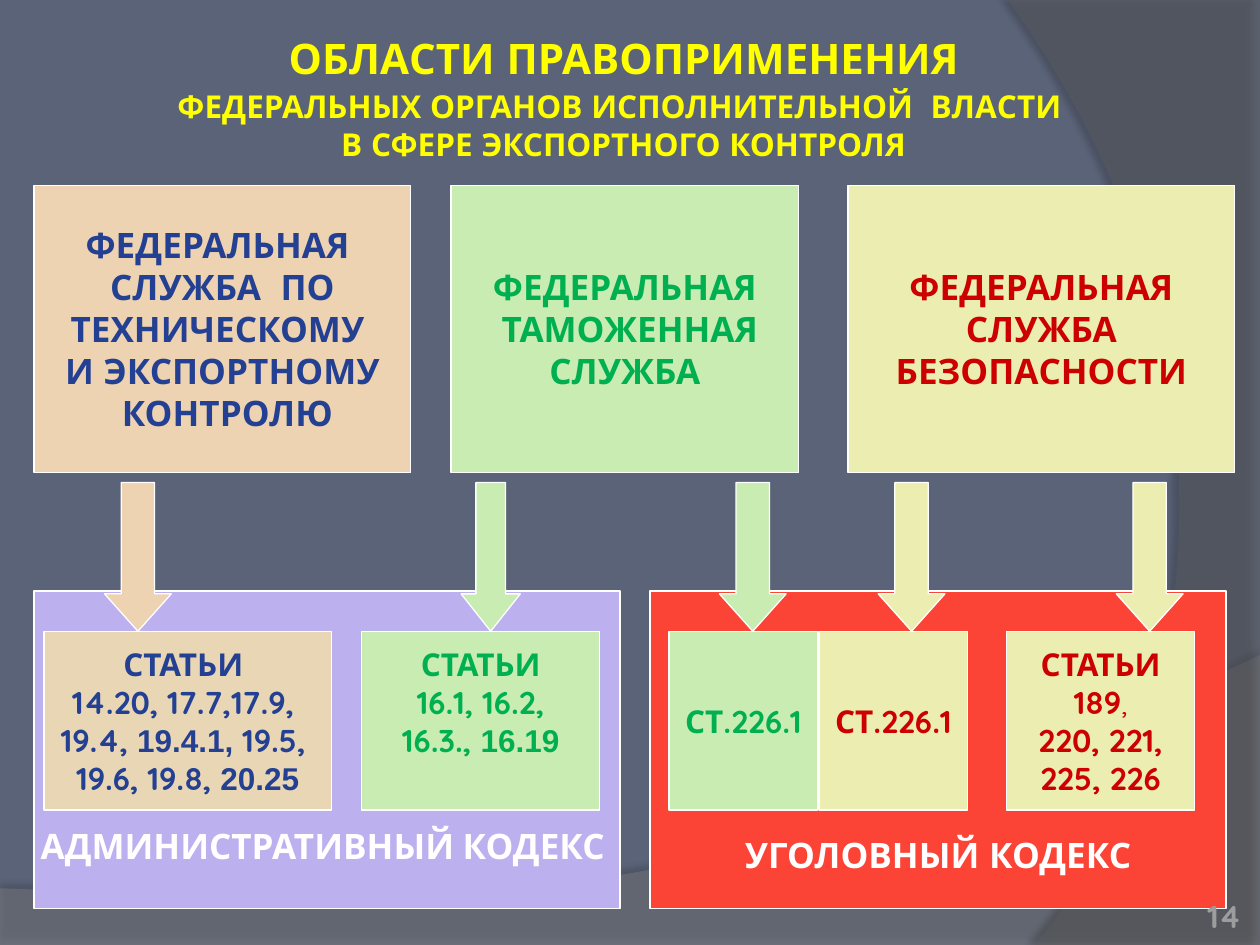
from lxml.etree import SubElement
from pptx import Presentation
from pptx.dml.color import RGBColor
from pptx.enum.shapes import MSO_SHAPE
from pptx.enum.text import MSO_ANCHOR, MSO_AUTO_SIZE, PP_ALIGN
from pptx.oxml.ns import qn
from pptx.util import Inches, Pt

THEME = {
    "back": "5A6378", "wave": "7F7F7F", "arc": "5E5E5E", "line": "FFFFFF",
    "title": "FFFF00", "number": "9D9D9E", "label": "FFFFFF",
    "sand": "EDD3B1", "tan": "E9D6B5", "green": "C9ECB2", "lemon": "ECEDB1",
    "violet": "BDB0EE", "red": "FC4436",
    "navy": "244092", "leaf": "00B050", "wine": "CC0000",
    "font": "Quicksand", "alt": "Arial",
    "head": 24, "big": 20, "mid": 18,
}
ALT = {"font": THEME["alt"]}

# A line is a string or a list of (text, format) runs.
TITLE = [
    [("ОБЛАСТИ ПРАВОПРИМЕНЕНИЯ", {"size": THEME["head"]})],
    [(" ", {"size": THEME["big"]}),
     ("ФЕДЕРАЛЬНЫХ ОРГАНОВ ИСПОЛНИТЕЛЬНОЙ  ВЛАСТИ  ", {})],
    "В СФЕРЕ ЭКСПОРТНОГО КОНТРОЛЯ",
]
# left, width, fill, ink, lines
AGENCIES = [
    (0.27, 2.99, "sand", "navy",
     ["ФЕДЕРАЛЬНАЯ ", "СЛУЖБА  ПО", "ТЕХНИЧЕСКОМУ ", "И ЭКСПОРТНОМУ", " КОНТРОЛЮ"]),
    (3.58, 2.76, "green", "leaf", ["ФЕДЕРАЛЬНАЯ", " ТАМОЖЕННАЯ", "СЛУЖБА"]),
    (6.73, 3.07, "lemon", "wine", ["ФЕДЕРАЛЬНАЯ", " СЛУЖБА ", "БЕЗОПАСНОСТИ"]),
]
# left, width, fill, space under the label, label
CODES = [
    (0.27, 4.65, "violet", 0.33,
     [[("АДМИНИСТРАТИВНЫЙ", {}), (" ", {"size": THEME["mid"]}), ("КОДЕКС", {}),
       (" ", {"size": THEME["mid"], "bold": False})]]),
    (5.16, 4.57, "red", 0.26, ["УГОЛОВНЫЙ КОДЕКС"]),
]
# left, width, fill, ink, bottom inset, lines
ARTICLES = [
    (0.35, 2.28, "tan", "navy", 0.05,
     ["СТАТЬИ ", "14.20, 17.7,17.9, ",
      [("19.4, ", {}), ("19.4.1,", ALT), (" 19.5, ", {})],
      [("19.6, 19.8, ", {}), ("20.25", ALT)]]),
    (2.87, 1.89, "green", "leaf", 0.35,
     ["СТАТЬИ", "16.1, 16.2,", [(" 16.3., ", {}), ("16.19 ", ALT)]]),
    (5.31, 1.18, "green", "leaf", 0.05, ["СТ.226.1"]),
    (6.5, 1.18, "lemon", "wine", 0.05, ["СТ.226.1"]),
    (7.99, 1.49, "lemon", "wine", 0.05,
     ["СТАТЬИ", [("189", {}), (",", {"bold": False})], "220, 221,", "225, 226"]),
]
# left, width, fill
ARROWS = [(0.83, 0.53, "sand"), (3.66, 0.47, "green"), (5.71, 0.53, "green"),
          (6.97, 0.53, "lemon"), (8.86, 0.53, "lemon")]


def rgb(key):
    return RGBColor.from_string(THEME[key])


def write(shape, lines, ink, size, font=THEME["font"], bold=True, wrap=False,
          align=PP_ALIGN.CENTER, anchor=MSO_ANCHOR.MIDDLE, inset=(0.1, 0.05, 0.1, 0.05)):
    frame = shape.text_frame
    frame.auto_size = MSO_AUTO_SIZE.NONE
    frame.word_wrap, frame.vertical_anchor = wrap, anchor
    (frame.margin_left, frame.margin_top,
     frame.margin_right, frame.margin_bottom) = map(Inches, inset)
    for i, line in enumerate(lines):
        para = frame.add_paragraph() if i else frame.paragraphs[0]
        para.alignment = align
        for text, own in [(line, {})] if isinstance(line, str) else line:
            run = para.add_run()
            run.text = text
            run.font.name = own.get("font", font)
            run.font.size = Pt(own.get("size", size))
            run.font.bold = own.get("bold", bold)
            run.font.color.rgb = rgb(ink)


def block(slide, kind, left, top, width, height, fill):
    shape = slide.shapes.add_shape(kind, *map(Inches, (left, top, width, height)))
    shape.shadow.inherit = False
    shape.fill.solid()
    shape.fill.fore_color.rgb = rgb(fill)
    shape.line.color.rgb = rgb("line")
    shape.line.width = Pt(0.75)
    return shape


def curve(a, b, c, d, steps=40):
    """Return points along a cubic Bezier curve."""
    for i in range(steps + 1):
        t = i / steps
        u = 1 - t
        yield tuple(u**3 * p + 3 * u * u * t * q + 3 * u * t * t * r + t**3 * s
                    for p, q, r, s in zip(a, b, c, d))


def swoosh(slide, points, fill, alpha, glow, blur, dist, turn):
    """Draw a see-through outline with a soft shadow."""
    points = [(Inches(x), Inches(y)) for x, y in points]
    build = slide.shapes.build_freeform(*points[0])
    build.add_line_segments(points[1:], close=True)
    shape = build.convert_to_shape()
    shape.shadow.inherit = False
    shape.fill.solid()
    shape.fill.fore_color.rgb = rgb(fill)
    shape.line.fill.background()
    props = shape.element.spPr
    tint = props.find(qn("a:solidFill")).find(qn("a:srgbClr"))
    SubElement(tint, qn("a:alpha"), val=str(alpha * 1000))
    cast = SubElement(props.find(qn("a:effectLst")), qn("a:outerShdw"),
                      blurRad=str(Pt(blur)), dist=str(Pt(dist)),
                      dir=str(turn * 60000), algn="ctr", rotWithShape="0")
    shade = SubElement(cast, qn("a:srgbClr"), val="000000")
    SubElement(shade, qn("a:alpha"), val=str(glow * 1000))


def main():
    deck = Presentation()
    deck.slide_width, deck.slide_height = Inches(10), Inches(7.5)
    slide = deck.slides.add_slide(deck.slide_layouts[5])
    slide.background.fill.solid()
    slide.background.fill.fore_color.rgb = rgb("back")

    wave = curve((10, 5.2), (5.59, 7.29), (3.91, 7.19), (0, 7.05))
    swoosh(slide, [(0, 7.5), (10, 7.5), *wave], "wave", 45, 35, 4, 3.5, 270)
    arc = curve((8.21, 7.5), (9.35, 6.19), (10.18, 3), (8, 0))
    swoosh(slide, [(10, 0), (10, 7.5), *arc], "arc", 40, 45, 4, 4, 180)

    rect = MSO_SHAPE.RECTANGLE
    for left, width, fill, ink, lines in AGENCIES:
        write(block(slide, rect, left, 1.47, width, 2.28, fill),
              lines, ink, THEME["big"])
    for left, width, fill, gap, lines in CODES:
        write(block(slide, rect, left, 4.69, width, 2.52, fill),
              lines, "label", THEME["big"], anchor=MSO_ANCHOR.BOTTOM,
              inset=(0.1, 0.05, 0.1, gap))
    for left, width, fill in ARROWS:
        arrow = block(slide, MSO_SHAPE.DOWN_ARROW, left, 3.83, width, 1.18, fill)
        arrow.adjustments[0] = 0.5
        arrow.adjustments[1] = round(0.295 / width, 2)
    for left, width, fill, ink, gap, lines in ARTICLES:
        write(block(slide, rect, left, 5.01, width, 1.42, fill),
              lines, ink, THEME["mid"], inset=(0.1, 0.05, 0.1, gap))

    number = slide.shapes.add_textbox(*map(Inches, (9.47, 7.11, 0.38, 0.31)))
    write(number, ["14"], "number", THEME["mid"], wrap=True, align=PP_ALIGN.RIGHT,
          anchor=MSO_ANCHOR.BOTTOM, inset=(0, 0, 0, 0))

    title = slide.shapes.title
    title.left, title.top, title.width, title.height = map(
        Inches, (0.51, 0.21, 8.88, 1.14))
    write(title, TITLE, "title", THEME["mid"], wrap=True, anchor=MSO_ANCHOR.TOP)
    title.element.getparent().append(title.element)
    deck.save("out.pptx")


if __name__ == "__main__":
    main()
